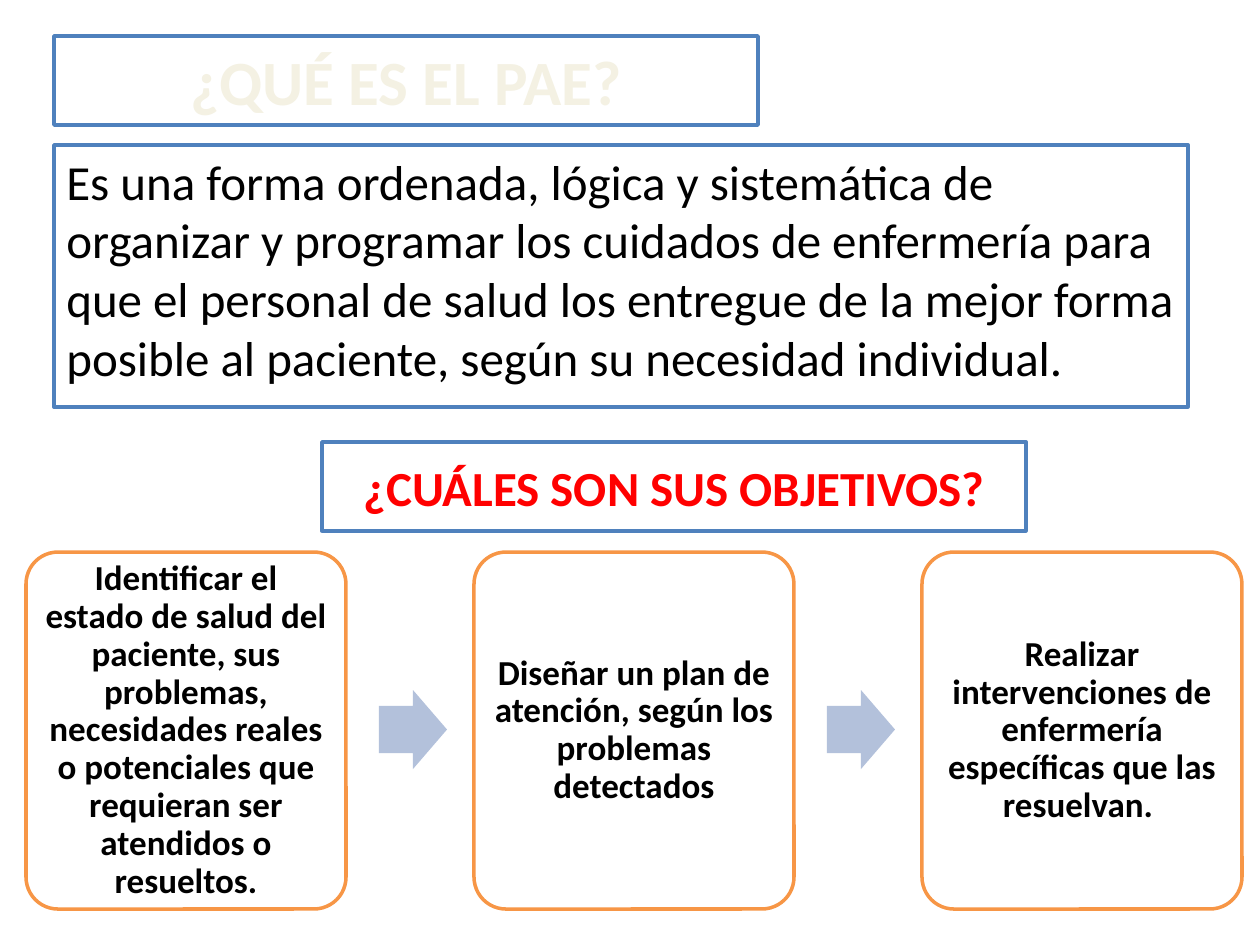
import pptx
import pptx.util
from lxml import etree
from pptx.dml.color import RGBColor
from pptx.enum.shapes import MSO_SHAPE
from pptx.enum.text import MSO_ANCHOR, MSO_AUTO_SIZE, PP_ALIGN
from pptx.oxml.ns import qn

EMU_PER_PX = 914400 / 126

WHITE = RGBColor(0xFF, 0xFF, 0xFF)
BLACK = RGBColor(0x00, 0x00, 0x00)
RED = RGBColor(0xFF, 0x00, 0x00)
CREAM = RGBColor(0xF4, 0xF1, 0xE3)
BLUE = RGBColor(0x4F, 0x81, 0xBD)
DARK_BLUE = RGBColor(0x05, 0x46, 0x97)
ORANGE = RGBColor(0xF7, 0x96, 0x46)
PALE_BLUE = RGBColor(0xB3, 0xC1, 0xDB)

CENTERED = {"alignment": PP_ALIGN.CENTER}
DEFINITION_PARAGRAPH = {"alignment": PP_ALIGN.LEFT, "space_before": pptx.util.Pt(5.6)}
GOAL_PARAGRAPH = {"alignment": PP_ALIGN.CENTER, "line_spacing": 0.9}

DEFINITION = (
    "Es una forma ordenada, lógica y sistemática de organizar y programar "
    "los cuidados de enfermería para que el personal de salud los entregue "
    "de la mejor forma posible al paciente, según su necesidad individual."
)
GOALS = [
    "Identificar el estado de salud del paciente, sus problemas, "
    "necesidades reales o potenciales que requieran ser atendidos o resueltos.",
    "Diseñar un plan de atención, según los problemas detectados",
    "Realizar intervenciones de enfermería específicas que las resuelvan. ",
]
GOAL_LEFT, GOAL_PITCH = 26, 448
ARROW_LEFT = 379


def px(length):
    return pptx.util.Emu(round(length * EMU_PER_PX))


def set_all(target, values):
    for name, value in values.items():
        setattr(target, name, value)


def paint(shape, fill, line=None):
    shape.fill.solid()
    shape.fill.fore_color.rgb = fill
    if line is None:
        shape.line.fill.background()
    else:
        shape.line.color.rgb = line
        shape.line.width = pptx.util.Pt(2)


def add_box(slide, kind, box, fill, line=None):
    shape = slide.shapes.add_shape(kind, *map(px, box))
    shape.shadow.inherit = False
    paint(shape, fill, line)
    return shape


def write(shape, text, paragraph_format, size, color, bold=False,
          anchor=MSO_ANCHOR.MIDDLE):
    frame = shape.text_frame
    set_all(frame, {"word_wrap": True, "auto_size": MSO_AUTO_SIZE.NONE,
                    "vertical_anchor": anchor})
    paragraph = frame.paragraphs[0]
    set_all(paragraph, paragraph_format)
    run = paragraph.add_run()
    run.text = text
    set_all(run.font, {"name": "Calibri", "size": pptx.util.Pt(size), "bold": bold})
    run.font.color.rgb = color
    return run


def outline_letters(run):
    outline = etree.Element(qn("a:ln"), w=str(pptx.util.Pt(1)))
    fill = etree.SubElement(outline, qn("a:solidFill"))
    etree.SubElement(fill, qn("a:srgbClr"), val=str(DARK_BLUE))
    run.font._element.insert(0, outline)


def add_title(slide):
    title = slide.shapes.title
    set_all(title, {"left": px(54), "top": px(36), "width": px(704), "height": px(89)})
    paint(title, WHITE, BLUE)
    outline_letters(write(title, "¿QUÉ ES EL PAE?", CENTERED, 36, CREAM, bold=True))


def add_definition(slide):
    panel = add_box(slide, MSO_SHAPE.RECTANGLE, (54, 145, 1134, 262), WHITE, BLUE)
    write(panel, DEFINITION, DEFINITION_PARAGRAPH, 28, BLACK, anchor=MSO_ANCHOR.TOP)


def add_goal(slide, left, text):
    card = add_box(slide, MSO_SHAPE.ROUNDED_RECTANGLE, (left, 552, 320, 357),
                   WHITE, ORANGE)
    card.adjustments[0] = 0.1
    sides = ("margin_left", "margin_top", "margin_right", "margin_bottom")
    set_all(card.text_frame, dict.fromkeys(sides, px(10)))
    write(card, text, GOAL_PARAGRAPH, 20, BLACK, bold=True)


def add_arrow(slide, left):
    arrow = add_box(slide, MSO_SHAPE.RIGHT_ARROW, (left, 690, 68, 79), PALE_BLUE)
    arrow.adjustments[0] = 0.6
    arrow.adjustments[1] = 0.5


def add_goals_heading(slide):
    heading = add_box(slide, MSO_SHAPE.RECTANGLE, (322, 442, 704, 89), WHITE, BLUE)
    outline_letters(write(heading, "¿CUÁLES SON SUS OBJETIVOS?", CENTERED, 28, RED,
                          bold=True))


def main():
    presentation = pptx.Presentation()
    set_all(presentation, {"slide_width": px(1260), "slide_height": px(945)})
    slide = presentation.slides.add_slide(presentation.slide_layouts[5])
    add_title(slide)
    add_definition(slide)
    for step, goal in enumerate(GOALS):
        if step:
            add_arrow(slide, ARROW_LEFT + (step - 1) * GOAL_PITCH)
        add_goal(slide, GOAL_LEFT + step * GOAL_PITCH, goal)
    add_goals_heading(slide)
    presentation.save("out.pptx")


if __name__ == "__main__":
    main()
